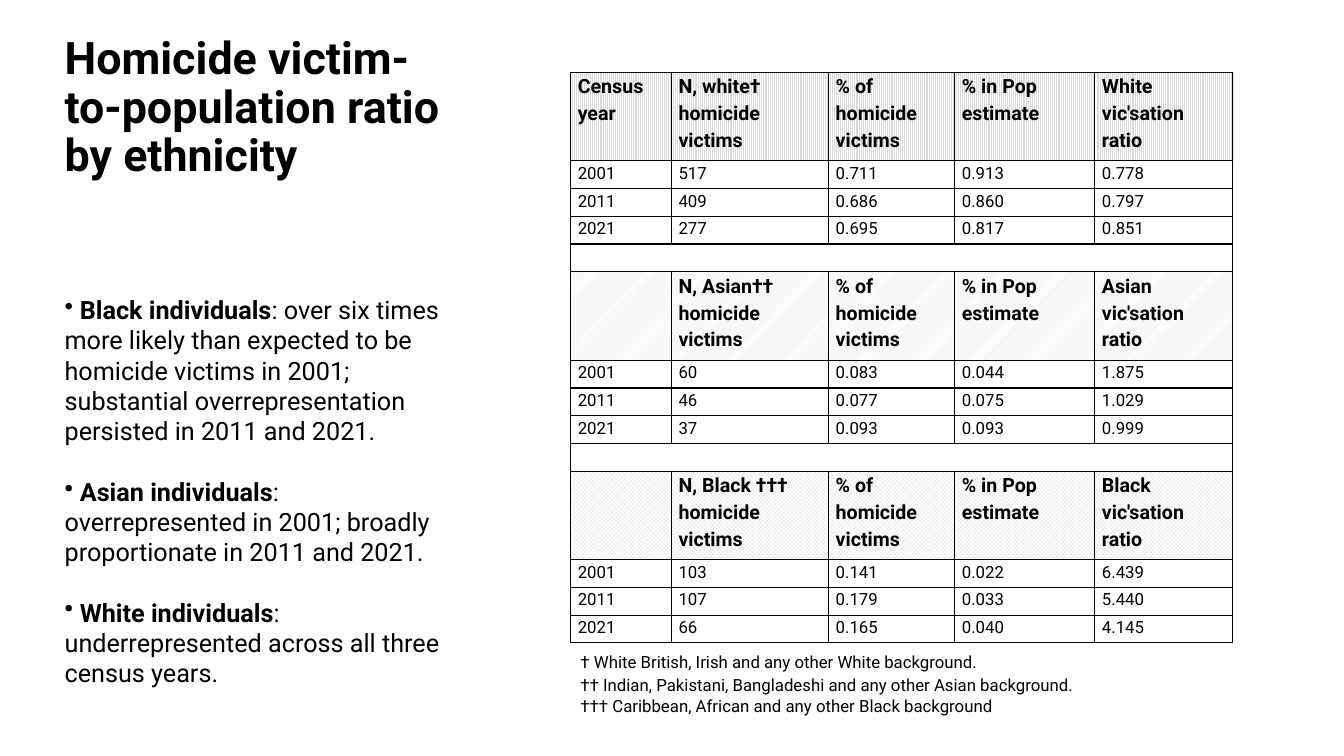
import pptx
import pptx.dml.color
import pptx.enum.dml
import pptx.enum.text
import pptx.oxml
import pptx.oxml.ns
import pptx.util
from lxml import etree

Cm = pptx.util.Cm
Pt = pptx.util.Pt
PATTERN = pptx.enum.dml.MSO_PATTERN
ALIGN = pptx.enum.text.PP_ALIGN
ANCHOR = pptx.enum.text.MSO_ANCHOR

COLUMN_WIDTHS = [2.54, 3.96, 3.18, 3.53, 3.48]
HEADER_HEIGHT, ROW_HEIGHT = 2.23, 0.7
SECTIONS = [
    ("Census year", "N, white† homicide victims", "White", PATTERN.LIGHT_VERTICAL, [
        ("2001", "517", "0.711", "0.913", "0.778"),
        ("2011", "409", "0.686", "0.860", "0.797"),
        ("2021", "277", "0.695", "0.817", "0.851")]),
    ("", "N, Asian†† homicide victims", "Asian", PATTERN.LIGHT_UPWARD_DIAGONAL, [
        ("2001", "60", "0.083", "0.044", "1.875"),
        ("2011", "46", "0.077", "0.075", "1.029"),
        ("2021", "37", "0.093", "0.093", "0.999")]),
    ("", "N, Black †††\nhomicide victims", "Black", PATTERN.TRELLIS, [
        ("2001", "103", "0.141", "0.022", "6.439"),
        ("2011", "107", "0.179", "0.033", "5.440"),
        ("2021", "66", "0.165", "0.040", "4.145")]),
]
FINDINGS = [
    ("Black individuals", ": over six times more likely than expected to be homicide victims "
     "in 2001; substantial overrepresentation persisted in 2011 and 2021."),
    ("Asian individuals", ": overrepresented in 2001; broadly proportionate in 2011 and 2021."),
    ("White individuals", ": underrepresented across all three census years."),
]
FOOTNOTES = [
    ("† White British, Irish and any other White background.", ALIGN.JUSTIFY, 1.15),
    ("†† Indian, Pakistani, Bangladeshi and any other Asian background.", ALIGN.JUSTIFY, 1.15),
    ("††† Caribbean, African and any other Black background", ALIGN.LEFT, 1.0),
]


def color(value):
    return pptx.dml.color.RGBColor.from_string(value)


class RatioSlide:
    font_name = "Roboto"
    ink = "000000"
    hatch = "D9D9D9"
    paper = "FFFFFF"

    def __init__(self, deck):
        self.page = deck.slides.add_slide(deck.slide_layouts[6])

    def style(self, para, size, bold=None):
        para.font.name = self.font_name
        para.font.size = Pt(size)
        para.font.bold = bold
        para.font.color.rgb = color(self.ink)

    def text_frame(self, left, top, width, height, anchor=ANCHOR.TOP):
        box = self.page.shapes.add_textbox(Cm(left), Cm(top), Cm(width), Cm(height))
        frame = box.text_frame
        frame.word_wrap = True
        frame.vertical_anchor = anchor
        return frame

    def title(self, text, *place):
        para = self.text_frame(*place).paragraphs[0]
        para.text = text
        para.line_spacing = 0.9
        self.style(para, 32, True)

    def findings(self, items, *place):
        frame = self.text_frame(*place, anchor=ANCHOR.MIDDLE)
        for index, (group, finding) in enumerate(items):
            para = frame.add_paragraph() if index else frame.paragraphs[0]
            properties = para._p.get_or_add_pPr()
            properties.set("marL", "0")
            properties.set("indent", "0")
            bullet = etree.SubElement(properties, pptx.oxml.ns.qn("a:buChar"))
            bullet.set("char", "•")
            if index:
                para.space_before = Pt(21.6)
            self.style(para, 18)
            for text, bold in ((" " + group, True), (finding, False)):
                span = para.add_run()
                span.text = text
                span.font.bold = bold

    def footnotes(self, items, *place):
        frame = self.text_frame(*place)
        for index, (text, alignment, spacing) in enumerate(items):
            para = frame.add_paragraph() if index else frame.paragraphs[0]
            para.text = text
            para.alignment = alignment
            para.line_spacing = spacing
            self.style(para, 12)

    def border(self, cell):
        properties = cell._tc.get_or_add_tcPr()
        for side in ("lnL", "lnR", "lnT", "lnB"):
            properties.append(pptx.oxml.parse_xml(
                f'<a:{side} {pptx.oxml.ns.nsdecls("a")} w="12700"><a:solidFill>'
                f'<a:srgbClr val="{self.ink}"/></a:solidFill></a:{side}>'))

    def cell(self, cell, text, pattern=None):
        """Fill in one cell; a pattern marks it as a header."""
        cell.margin_left = cell.margin_right = Cm(0.18)
        cell.margin_top = cell.margin_bottom = 0
        self.border(cell)
        if pattern is None:
            cell.fill.background()
        else:
            cell.fill.patterned()
            cell.fill.pattern = pattern
            cell.fill.fore_color.rgb = color(self.hatch)
            cell.fill.back_color.rgb = color(self.paper)
        cell.text = text
        for para in cell.text_frame.paragraphs:
            para.line_spacing = 1.15
            self.style(para, 12 if pattern is None else 14, pattern is not None)

    def ratio_table(self, sections, left, top):
        rows = []
        for first, count, group, pattern, values in sections:
            if rows:
                rows.append(([""] * len(COLUMN_WIDTHS), None))
            header = (first, count, "% of homicide victims", "% in Pop estimate",
                      f"{group} vic'sation ratio")
            rows.append((header, pattern))
            rows.extend((line, None) for line in values)
        heights = [ROW_HEIGHT if pattern is None else HEADER_HEIGHT for _, pattern in rows]
        table = self.page.shapes.add_table(
            len(rows), len(COLUMN_WIDTHS), Cm(left), Cm(top),
            Cm(sum(COLUMN_WIDTHS)), Cm(sum(heights))).table
        table.first_row = table.horz_banding = False
        for column, width in zip(table.columns, COLUMN_WIDTHS):
            column.width = Cm(width)
        for index, (texts, pattern) in enumerate(rows):
            table.rows[index].height = Cm(heights[index])
            for position, text in enumerate(texts):
                self.cell(table.cell(index, position), text, pattern)
            if not any(texts):
                table.cell(index, 0).merge(table.cell(index, len(texts) - 1))


def main():
    deck = pptx.Presentation()
    deck.slide_width, deck.slide_height = Cm(33.87), Cm(19.05)
    slide = RatioSlide(deck)
    slide.title("Homicide victim-to-population ratio by ethnicity", 1.38, 0.78, 9.98, 4.88)
    slide.ratio_table(SECTIONS, 14.38, 1.82)
    slide.findings(FINDINGS, 1.38, 7.25, 10.62, 10.25)
    slide.footnotes(FOOTNOTES, 14.38, 16.23, 16.94, 1.95)
    deck.save("out.pptx")


if __name__ == "__main__":
    main()
